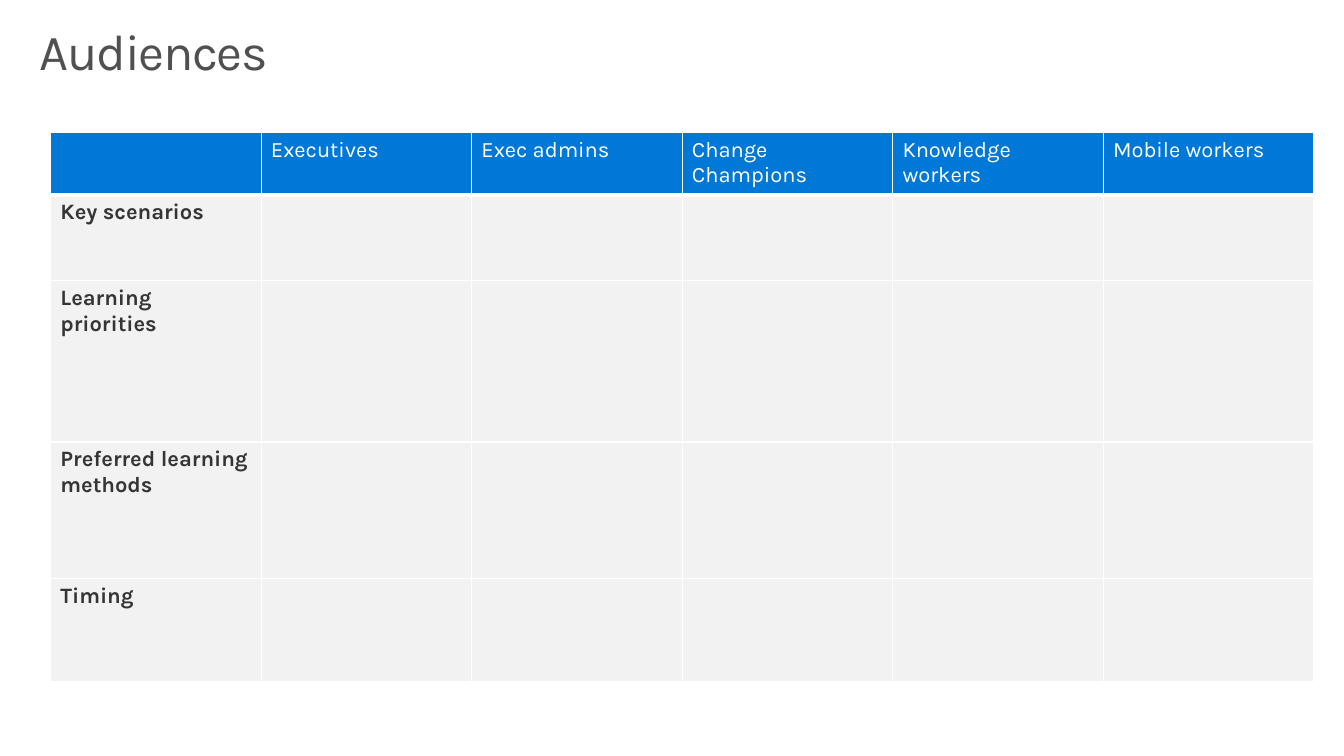
from dataclasses import dataclass

import pptx
import pptx.dml.color
import pptx.enum.text
import pptx.oxml.ns
import pptx.util
from lxml import etree
from pptx.util import Cm

RGB = pptx.dml.color.RGBColor.from_string


@dataclass(frozen=True)
class Theme:
    font: str = "Karla"
    title_size: float = 36.7
    table_size: float = 16
    title_color: str = "505050"
    header_fill: str = "0078D7"
    header_text: str = "FFFFFF"
    body_fill: str = "F2F2F2"
    body_text: str = "353535"
    border: str = "FFFFFF"
    thin_border: float = 1
    thick_border: float = 3


THEME = Theme()
AUDIENCES = ["Executives", "Exec admins", "Change Champions",
             "Knowledge workers", "Mobile workers"]
TOPICS = ["Key scenarios", "Learning priorities",
          "Preferred learning methods", "Timing"]
COLUMN_WIDTH = Cm(5.41)
ROW_HEIGHTS = [Cm(1.5), Cm(2.21), Cm(4.14), Cm(3.51), Cm(2.64)]


def set_font(paragraph, size, color, bold=False):
    font = paragraph.font
    font.name = THEME.font
    font.size = pptx.util.Pt(size)
    font.bold = bold
    font.color.rgb = RGB(color)


def add_title(slide, wording):
    title = slide.shapes.title
    title.left, title.top, title.width, title.height = Cm(1.02), Cm(0.69), Cm(33.02), Cm(1.45)
    frame = title.text_frame
    frame.text = wording
    frame.margin_left = frame.margin_top = frame.margin_right = frame.margin_bottom = 0
    frame.vertical_anchor = pptx.enum.text.MSO_ANCHOR.TOP
    frame.auto_size = pptx.enum.text.MSO_AUTO_SIZE.SHAPE_TO_FIT_TEXT
    heading = frame.paragraphs[0]
    heading.alignment = pptx.enum.text.PP_ALIGN.LEFT
    heading.line_spacing = 0.9
    set_font(heading, THEME.title_size, THEME.title_color)
    heading.font._element.set("spc", "-100")


def set_borders(cell, top, bottom):
    """Draw the four cell borders; top and bottom are widths in points."""
    properties = cell._tc.get_or_add_tcPr()
    widths = {"L": THEME.thin_border, "R": THEME.thin_border, "T": top, "B": bottom}
    for side, width in widths.items():
        line = etree.SubElement(properties, pptx.oxml.ns.qn(f"a:ln{side}"),
                                w=str(pptx.util.Pt(width)))
        fill = etree.SubElement(line, pptx.oxml.ns.qn("a:solidFill"))
        etree.SubElement(fill, pptx.oxml.ns.qn("a:srgbClr"), val=THEME.border)


def format_cell(cell, wording, row):
    is_header = row == 0
    set_borders(cell,
                top=THEME.thick_border if row == 1 else THEME.thin_border,
                bottom=THEME.thick_border if is_header else THEME.thin_border)
    cell.fill.solid()
    cell.fill.fore_color.rgb = RGB(THEME.header_fill if is_header else THEME.body_fill)
    cell.text = wording
    set_font(cell.text_frame.paragraphs[0], THEME.table_size,
             THEME.header_text if is_header else THEME.body_text, bold=not is_header)


def add_audience_table(slide):
    rows = [["", *AUDIENCES]] + [[topic] + [""] * len(AUDIENCES) for topic in TOPICS]
    column_count = len(rows[0])
    table = slide.shapes.add_table(len(rows), column_count, Cm(1.3), Cm(3.4),
                                   COLUMN_WIDTH * column_count, sum(ROW_HEIGHTS)).table
    table.horz_banding = False
    for column in table.columns:
        column.width = COLUMN_WIDTH
    for row, wordings in enumerate(rows):
        table.rows[row].height = ROW_HEIGHTS[row]
        for column, wording in enumerate(wordings):
            format_cell(table.cell(row, column), wording, row)


def main():
    deck = pptx.Presentation()
    deck.slide_width, deck.slide_height = Cm(34.54), Cm(19.43)
    slide = deck.slides.add_slide(deck.slide_layouts.get_by_name("Title Only"))
    add_title(slide, "Audiences")
    add_audience_table(slide)
    deck.save("out.pptx")


if __name__ == "__main__":
    main()
